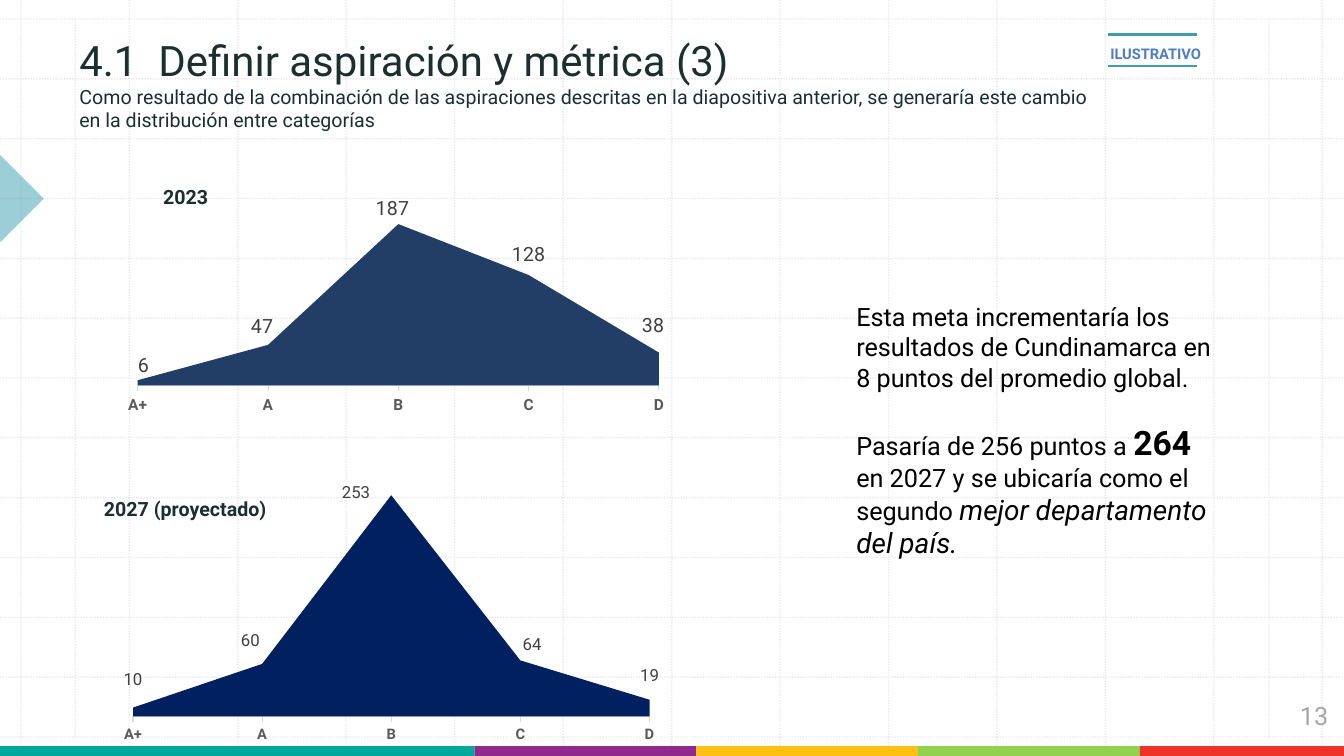
from dataclasses import dataclass
from itertools import pairwise

from lxml.etree import SubElement
from pptx import Presentation
from pptx.chart.data import CategoryChartData
from pptx.dml.color import RGBColor
from pptx.enum.chart import XL_CHART_TYPE as ChartType, XL_TICK_LABEL_POSITION as TickLabels, XL_TICK_MARK as TickMark
from pptx.enum.dml import MSO_LINE as Dash
from pptx.enum.shapes import MSO_CONNECTOR as Connector, MSO_SHAPE as Shape
from pptx.enum.text import MSO_ANCHOR as Anchor, PP_ALIGN as Align
from pptx.oxml import parse_xml
from pptx.oxml.ns import nsdecls, qn
from pptx.util import Cm, Pt

FONT = "Roboto"
DARK = "1B2F2E"
TEAL = "3B9EB1"
GRID = "BCBCBC"
WIDTH, HEIGHT = 33.87, 19.05
CATEGORIES = ["A+", "A", "B", "C", "D"]


@dataclass
class Span:
    text: str
    size: float
    color: str = "000000"
    bold: bool = False
    italic: bool = False


@dataclass
class TextBlock:
    left: float
    top: float
    width: float
    height: float
    paras: list[list[Span]]
    align: Align = Align.LEFT
    line_spacing: float = 1.0
    gap: float = 0


@dataclass
class AreaPanel:
    top: float
    height: float
    values: list[int]
    color: str
    axis_size: float
    label_size: float
    plot: tuple[float, float, float, float]
    label_shifts: list[tuple[float, float]]


def rgb(color: str) -> RGBColor:
    return RGBColor.from_string(color)


def set_alpha(fill_parent, percent: int) -> None:
    color = next(fill_parent.iter(qn("a:srgbClr")))
    SubElement(color, qn("a:alpha"), val=str(percent * 1000))


def style_font(font, size: float, color: str, bold: bool = False, italic: bool = False) -> None:
    font.name, font.size = FONT, Pt(size)
    font.bold, font.italic = bold, italic
    font.color.rgb = rgb(color)


def add_line(page, x1: float, y1: float, x2: float, y2: float, color: str, width: float):
    line = page.shapes.add_connector(Connector.STRAIGHT, Cm(x1), Cm(y1), Cm(x2), Cm(y2))
    line.line.color.rgb = rgb(color)
    line.line.width = Pt(width)
    SubElement(line._element.spPr, qn("a:effectLst"))
    return line


def add_grid_line(page, x1: float, y1: float, x2: float, y2: float) -> None:
    line = add_line(page, x1, y1, x2, y2, GRID, 1)
    line.line.dash_style = Dash.ROUND_DOT
    set_alpha(line._element.spPr, 30)


def add_grid(page) -> None:
    left, right, top, bottom, steps = 0.53, 33.32, 0.48, 18.57, 12
    for i in range(steps + 1):
        x = left + (right - left) * i / steps
        y = top + (bottom - top) * i / steps
        add_grid_line(page, x, 0, x, HEIGHT)
        add_grid_line(page, 0, y, WIDTH, y)
    for x in (1.9, 31.98):
        add_grid_line(page, x, top, x, bottom)


def add_solid(page, kind: Shape, left: float, top: float, width: float, height: float, color: str):
    shape = page.shapes.add_shape(kind, Cm(left), Cm(top), Cm(width), Cm(height))
    shape.shadow.inherit = False
    shape.fill.solid()
    shape.fill.fore_color.rgb = rgb(color)
    shape.line.fill.background()
    return shape


def add_text(page, block: TextBlock) -> None:
    box = page.shapes.add_textbox(Cm(block.left), Cm(block.top), Cm(block.width), Cm(block.height))
    frame = box.text_frame
    frame.word_wrap = True
    for i, spans in enumerate(block.paras):
        para = frame.add_paragraph() if i else frame.paragraphs[0]
        para.alignment = block.align
        para.line_spacing = block.line_spacing
        if i:
            para.space_before = Pt(block.gap)
        for span in spans:
            run = para.add_run()
            run.text = span.text
            style_font(run.font, span.size, span.color, span.bold, span.italic)


def add_title(page, title: Span, subtitle: Span) -> None:
    box = page.shapes.add_textbox(Cm(1.75), Cm(2.21), Cm(26), Cm(1.24))
    frame = box.text_frame
    frame.word_wrap = True
    frame.vertical_anchor = Anchor.BOTTOM
    para = frame.paragraphs[0]
    para.text = f"{title.text}\v{subtitle.text}"
    for run, span in zip(para.runs, (title, subtitle)):
        style_font(run.font, span.size, span.color)


def manual_layout(sizes: dict[str, float], inner: bool = False):
    target = '<c:layoutTarget val="inner"/>' if inner else ""
    modes = '<c:xMode val="edge"/><c:yMode val="edge"/>' if inner else ""
    values = "".join(f'<c:{key} val="{value}"/>' for key, value in sizes.items())
    return parse_xml(f'<c:layout {nsdecls("c")}><c:manualLayout>{target}{modes}{values}</c:manualLayout></c:layout>')


def add_area_chart(page, panel: AreaPanel) -> None:
    data = CategoryChartData()
    data.categories = CATEGORIES
    data.add_series("Series 1", panel.values)
    chart = page.shapes.add_chart(
        ChartType.AREA, Cm(2.36), Cm(panel.top), Cm(14.81), Cm(panel.height), data
    ).chart
    chart.has_title = chart.has_legend = False
    style_font(chart.font, 10, "000000")

    plot_area = chart.element.chart.plotArea
    for layout in plot_area.findall(qn("c:layout")):
        plot_area.remove(layout)
    plot_area.insert(0, manual_layout(dict(zip("xywh", panel.plot)), inner=True))

    value_axis = chart.value_axis
    value_axis.minimum_scale, value_axis.maximum_scale, value_axis.major_unit = 0, 280, 40
    value_axis.has_major_gridlines = False
    value_axis.visible = False
    category_axis = chart.category_axis
    category_axis.has_major_gridlines = False
    category_axis.major_tick_mark = TickMark.OUTSIDE
    category_axis.minor_tick_mark = TickMark.NONE
    category_axis.tick_label_position = TickLabels.LOW
    category_axis.format.line.color.rgb = rgb("D9D9D9")
    category_axis.format.line.width = Pt(0.75)
    style_font(category_axis.tick_labels.font, panel.axis_size, "595959", bold=True)

    plot = chart.plots[0]
    plot.vary_by_categories = False
    series = plot.series[0]
    series.format.fill.solid()
    series.format.fill.fore_color.rgb = rgb(panel.color)
    for i in range(len(panel.values)):
        style_font(series.points[i].data_label.font, panel.label_size, "404040")
    for label, (x, y) in zip(chart.element.xpath(".//c:ser/c:dLbls/c:dLbl"), panel.label_shifts):
        label.insert(1, manual_layout({"x": x, "y": y}))
    for leader in chart.element.xpath(".//c:dLbls/c:showLeaderLines"):
        leader.set("val", "0")


def main() -> None:
    deck = Presentation()
    deck.slide_width, deck.slide_height = Cm(WIDTH), Cm(HEIGHT)
    page = deck.slides.add_slide(deck.slide_layouts[6])

    add_grid(page)
    marker = add_solid(page, Shape.RIGHT_TRIANGLE, -0.79, 4.22, 1.57, 1.57, TEAL)
    marker.rotation = 225
    set_alpha(marker._element.spPr, 50)

    add_title(
        page,
        Span("4.1  Definir aspiración y métrica (3)", 30, DARK),
        Span("Como resultado de la combinación de las aspiraciones descritas en la diapositiva anterior, "
             "se generaría este cambio en la distribución entre categorías", 14, DARK),
    )
    for y in (0.87, 1.66):
        add_line(page, 27.93, y, 30.16, y, TEAL, 1.5)

    band_edges = [0, 11.96, 17.55, 23.14, 28.73, WIDTH]
    band_colors = ["00A79C", "90298D", "FEC113", "92D050", "ED3326"]
    for (left, right), color in zip(pairwise(band_edges), band_colors):
        add_solid(page, Shape.RECTANGLE, left, 18.8, right - left, 0.25, color)

    for panel in (
        AreaPanel(3.45, 7.37, [6, 47, 187, 128, 38], "223E66", 11, 14, (0.075, 0.024, 0.887, 0.826),
                  [(0.01, -0.06), (-0.01, -0.13), (-0.01, -0.33), (0, -0.26), (-0.01, -0.15)]),
        AreaPanel(11.33, 7.39, [10, 60, 253, 64, 19], "002060", 10.5, 12, (0.067, 0.076, 0.879, 0.842),
                  [(0, -0.11), (-0.02, -0.17), (-0.06, -0.39), (0.02, -0.15), (0, -0.11)]),
    ):
        add_area_chart(page, panel)

    for block in (
        TextBlock(27.18, 0.97, 3.89, 0.97, [[Span("ILUSTRATIVO", 10.5, "4D7EC3", bold=True)]],
                  align=Align.CENTER, line_spacing=1.1),
        TextBlock(32.51, 17.53, 1.24, 1.02, [[Span("13", 18, "A6A6A6")]]),
        TextBlock(3.86, 4.47, 2.01, 1.17, [[Span("2023", 14, DARK, bold=True)]], line_spacing=1.1),
        TextBlock(2.37, 12.33, 4.98, 1.17, [[Span("2027 (proyectado)", 14, DARK, bold=True)]], line_spacing=1.1),
        TextBlock(21.33, 7.47, 9.73, 6.83, [
            [Span("Esta meta incrementaría los resultados de Cundinamarca en 8 puntos del promedio global.", 18)],
            [Span("Pasaría de 256 puntos a ", 18), Span("264", 24, bold=True),
             Span(" en 2027 y se ubicaría como el segundo ", 18),
             Span("mejor departamento del país.", 20, italic=True)],
        ], gap=21),
    ):
        add_text(page, block)

    deck.save("out.pptx")


if __name__ == "__main__":
    main()
